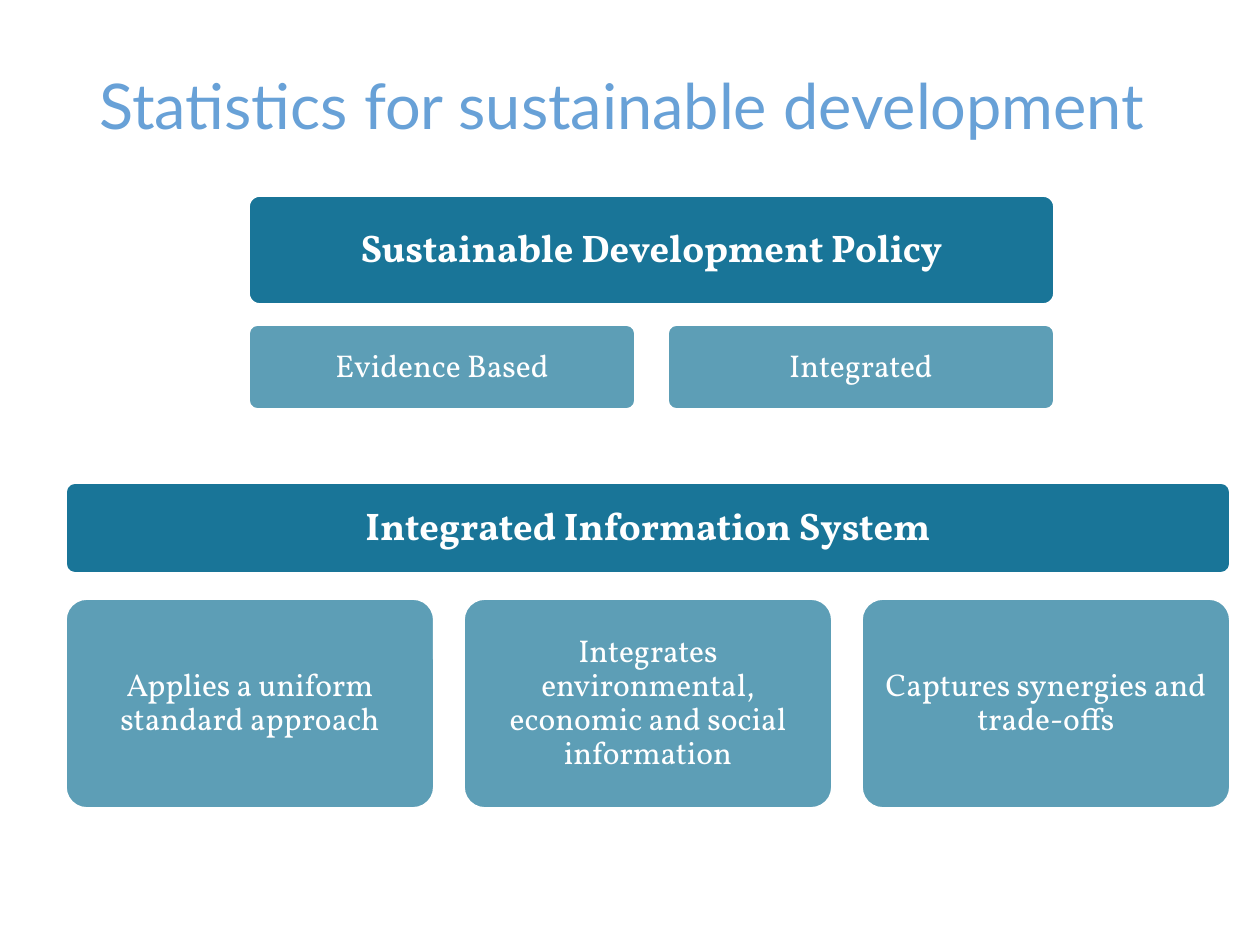
from lxml import etree
from pptx import Presentation
from pptx import util as u
from pptx.dml.color import RGBColor
from pptx.enum import shapes, text
from pptx.oxml.ns import qn

TEAL = RGBColor(0x19, 0x75, 0x98)
SKY = RGBColor(0x68, 0xA1, 0xD7)
WHITE = RGBColor(0xFF, 0xFF, 0xFF)
SCALE = 914400 / 126


def px(count):
    return u.Emu(round(count * SCALE))


class Deck:
    head = "Lato"
    body = "Vollkorn"

    def __init__(self):
        self.file = Presentation()
        self.file.slide_width = px(1260)
        self.file.slide_height = px(945)
        self.slide = self.file.slides.add_slide(self.file.slide_layouts[5])

    def label(self, frame, words, font, size, color, align, bold=False):
        frame.word_wrap = True
        frame.auto_size = text.MSO_AUTO_SIZE.NONE
        para = frame.paragraphs[0]
        para.alignment = align
        para.line_spacing = 0.9
        run = para.add_run()
        run.text = words
        run.font.name = font
        run.font.size = u.Pt(size)
        run.font.bold = bold
        run.font.color.rgb = color

    def title(self, words, left, top, width, height):
        shape = self.slide.shapes.title
        shape.left, shape.top = px(left), px(top)
        shape.width, shape.height = px(width), px(height)
        shape.text_frame.vertical_anchor = text.MSO_ANCHOR.BOTTOM
        self.label(shape.text_frame, words, self.head, 36, SKY, text.PP_ALIGN.LEFT)

    def box(self, words, left, top, width, height, size, inset, bold=False, alpha=100):
        shape = self.slide.shapes.add_shape(
            shapes.MSO_SHAPE.ROUNDED_RECTANGLE,
            px(left), px(top), px(width), px(height))
        shape.adjustments[0] = 0.1
        shape.shadow.inherit = False
        shape.fill.solid()
        shape.fill.fore_color.rgb = TEAL
        if alpha < 100:
            color = shape.element.spPr.find(qn("a:solidFill"))[0]
            etree.SubElement(color, qn("a:alpha")).set("val", str(alpha * 1000))
        shape.line.color.rgb = WHITE
        shape.line.width = u.Pt(1)
        frame = shape.text_frame
        frame.margin_left = frame.margin_right = px(inset)
        frame.margin_top = frame.margin_bottom = px(inset)
        frame.vertical_anchor = text.MSO_ANCHOR.MIDDLE
        self.label(frame, words, self.body, size, WHITE, text.PP_ALIGN.CENTER, bold)

    def group(self, name, cards, left, width, top, height, row, depth, gap):
        self.box(name, left, top, width, height, 22, 11, bold=True)
        count = len(cards)
        span = (width - gap * (count - 1)) / count
        for place, words in enumerate(cards):
            self.box(words, left + place * (span + gap), row, span, depth,
                     18, 9, alpha=70)


def main():
    deck = Deck()
    deck.title("Statistics for sustainable development", 87, 67, 1109, 82)
    deck.group("Sustainable Development Policy",
               ["Evidence Based", "Integrated"],
               left=249, width=805, top=196, height=108,
               row=325, depth=84, gap=33)
    deck.group("Integrated Information System",
               ["Applies a uniform standard approach",
                "Integrates environmental, economic and social information",
                "Captures synergies and trade-offs"],
               left=66, width=1164, top=483, height=90,
               row=599, depth=209, gap=30)
    deck.file.save("out.pptx")


if __name__ == "__main__":
    main()
